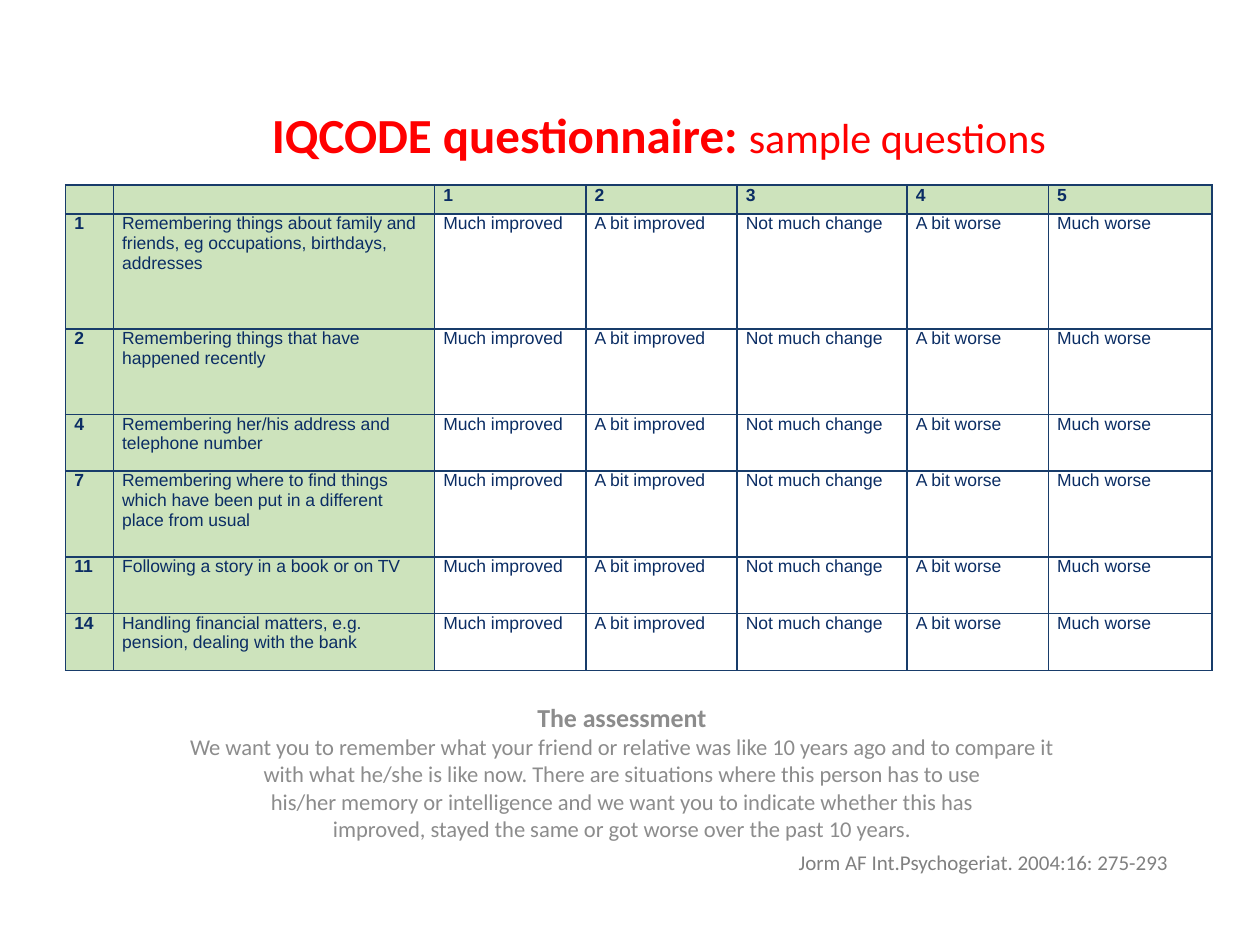
"""Build the IQCODE sample questions slide."""
from dataclasses import dataclass

from lxml import etree
from pptx import Presentation
from pptx.dml.color import RGBColor
from pptx.enum.text import MSO_ANCHOR, PP_ALIGN
from pptx.oxml.ns import qn
from pptx.util import Inches, Pt

CENTER = PP_ALIGN.CENTER
RIGHT = PP_ALIGN.RIGHT
MIDDLE = MSO_ANCHOR.MIDDLE
TITLE_ONLY = 5

QUESTIONS = [
    ("1", "Remembering things about family and friends, eg occupations, birthdays, addresses"),
    ("2", "Remembering things that have happened recently"),
    ("4", "Remembering her/his address and telephone number"),
    ("7", "Remembering where to find things which have been put in a different place from usual"),
    ("11", "Following a story in a book or on TV"),
    ("14", "Handling financial matters, e.g. pension, dealing with the bank"),
]
ANSWERS = ["Much improved", "A bit improved", "Not much change", "A bit worse", "Much worse"]
COLUMN_WIDTHS = [0.38, 2.55, 1.2, 1.2, 1.35, 1.12, 1.3]
ROW_HEIGHTS = [0.23, 0.91, 0.68, 0.45, 0.68, 0.45, 0.45]
INSTRUCTIONS = [
    "We want you to remember what your friend or relative was like 10 years ago and to compare it",
    "with what he/she is like now. There are situations where this person has to use",
    "his/her memory or intelligence and we want you to indicate whether this has",
    "improved, stayed the same or got worse over the past 10 years.",
]


@dataclass(frozen=True)
class Theme:
    """Colours, fonts and type sizes of the slide."""
    title: str = "FF0000"
    note: str = "8C8C8C"
    source: str = "808080"
    cell: str = "0B2D64"
    border: str = "183C6A"
    label: str = "CDE3BC"
    text_font: str = "Calibri"
    table_font: str = "Arial"
    title_size: float = 28
    subtitle_size: float = 24
    heading_size: float = 14.8
    note_size: float = 12.9
    source_size: float = 12
    cell_size: float = 10


class SlideBuilder:
    """Hold the theme and the current slide, and add its elements."""

    def __init__(self, slide, theme):
        """Keep the slide and its theme."""
        self.slide = slide
        self.theme = theme

    def style(self, span, size, color, font=None, bold=False):
        """Format one run."""
        span.font.name = font or self.theme.text_font
        span.font.size = Pt(size)
        span.font.bold = bold
        span.font.color.rgb = RGBColor.from_string(color)

    def title(self, main, detail, left, top, width, height):
        """Place the title with a bold part and a lighter part."""
        box = self.slide.shapes.title
        box.left, box.top = Inches(left), Inches(top)
        box.width, box.height = Inches(width), Inches(height)
        frame = box.text_frame
        frame.vertical_anchor = MIDDLE
        frame.margin_bottom = Inches(0.45)
        frame.text = main
        para = frame.paragraphs[0]
        para.alignment = CENTER
        para.add_run().text = detail
        strong, light = para.runs
        self.style(strong, self.theme.title_size, self.theme.title, bold=True)
        self.style(light, self.theme.subtitle_size, self.theme.title)

    def text(self, lines, left, top, width, height, size, color, alignment, bold=False):
        """Add a text box with one paragraph for each line."""
        box = self.slide.shapes.add_textbox(
            Inches(left), Inches(top), Inches(width), Inches(height))
        frame = box.text_frame
        frame.word_wrap = True
        frame.margin_top = frame.margin_bottom = 0
        frame.text = "\n".join(lines)
        for para in frame.paragraphs:
            para.alignment = alignment
            self.style(para.runs[0], size, color, bold=bold)

    def border(self, cell):
        """Draw a thin line on each side of a cell."""
        properties = cell._tc.get_or_add_tcPr()
        for side in ("a:lnL", "a:lnR", "a:lnT", "a:lnB"):
            line = etree.SubElement(properties, qn(side), w=str(Pt(1)))
            fill = etree.SubElement(line, qn("a:solidFill"))
            etree.SubElement(fill, qn("a:srgbClr"), val=self.theme.border)

    def cell(self, cell, text, bold, shaded):
        """Fill and format one table cell."""
        cell.margin_left = cell.margin_right = Inches(0.07)
        cell.margin_top = cell.margin_bottom = 0
        self.border(cell)
        if shaded:
            cell.fill.solid()
            cell.fill.fore_color.rgb = RGBColor.from_string(self.theme.label)
        else:
            cell.fill.background()
        para = cell.text_frame.paragraphs[0]
        para.text = text
        for span in para.runs:
            self.style(span, self.theme.cell_size, self.theme.cell, self.theme.table_font, bold)
        if not text:
            para._p.get_or_add_endParaRPr().set("sz", str(self.theme.cell_size * 100))

    def table(self, rows, left, top, widths, heights):
        """Add a table with a shaded header row and label columns."""
        table = self.slide.shapes.add_table(
            len(heights), len(widths), Inches(left), Inches(top),
            Inches(sum(widths)), Inches(sum(heights))).table
        table.first_row = table.horz_banding = False
        for column, width in zip(table.columns, widths):
            column.width = Inches(width)
        for row, height in zip(table.rows, heights):
            row.height = Inches(height)
        for i, texts in enumerate(rows):
            for j, text in enumerate(texts):
                self.cell(table.cell(i, j), text, i == 0 or j == 0, i == 0 or j < 2)


def main():
    """Build and save the deck."""
    deck = Presentation()
    deck.slide_width, deck.slide_height = Inches(10), Inches(7.5)
    theme = Theme()
    page = SlideBuilder(deck.slides.add_slide(deck.slide_layouts[TITLE_ONLY]), theme)

    page.title("IQCODE questionnaire: ", "sample questions", 0.98, 0.46, 8.5, 1.61)
    header = ["", ""] + [str(score) for score in range(1, len(ANSWERS) + 1)]
    rows = [header] + [[number, question] + ANSWERS for number, question in QUESTIONS]
    page.table(rows, 0.52, 1.47, COLUMN_WIDTHS, ROW_HEIGHTS)
    page.text(["The assessment"], 0.31, 5.57, 9.25, 0.25,
              theme.heading_size, theme.note, CENTER, bold=True)
    page.text(INSTRUCTIONS, 0.31, 5.82, 9.25, 0.88, theme.note_size, theme.note, CENTER)
    page.text(["Jorm AF Int.Psychogeriat. 2004:16: 275-293"], 5.37, 6.74, 4, 0.2,
              theme.source_size, theme.source, RIGHT)
    deck.save("out.pptx")


if __name__ == "__main__":
    main()
